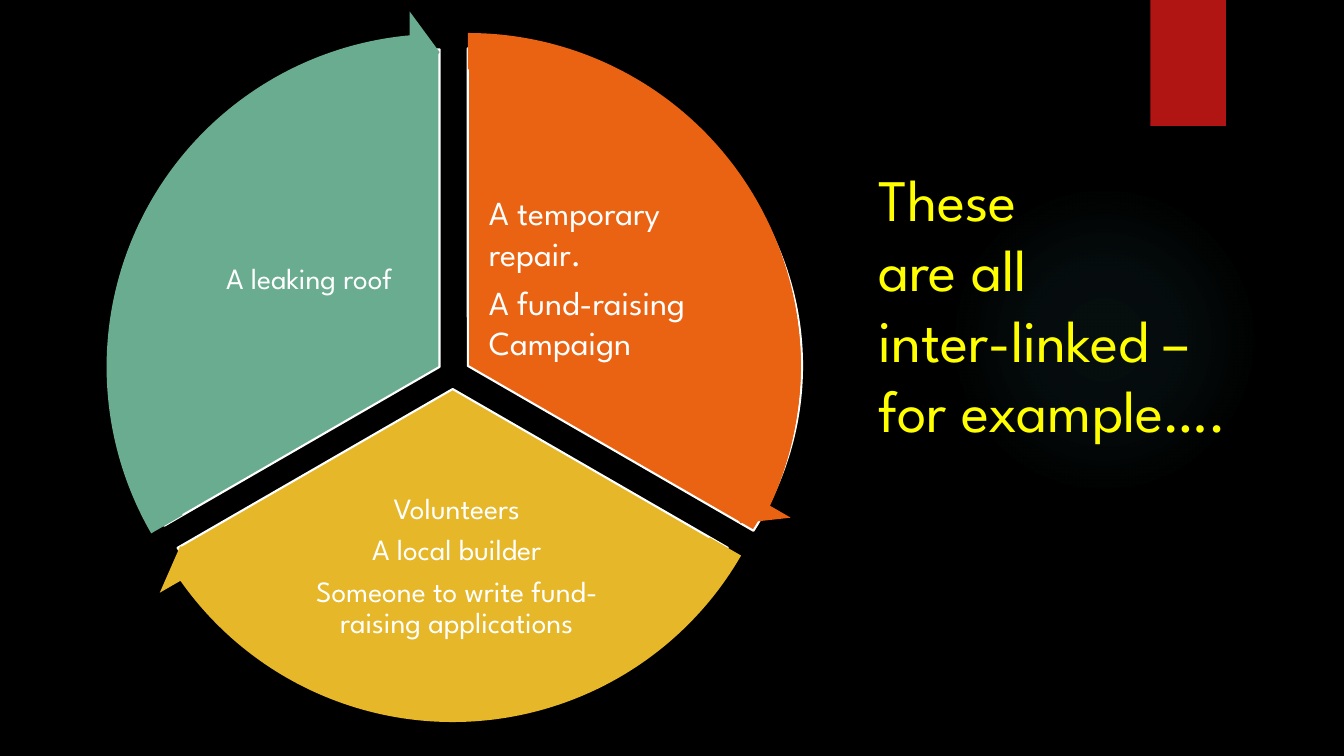
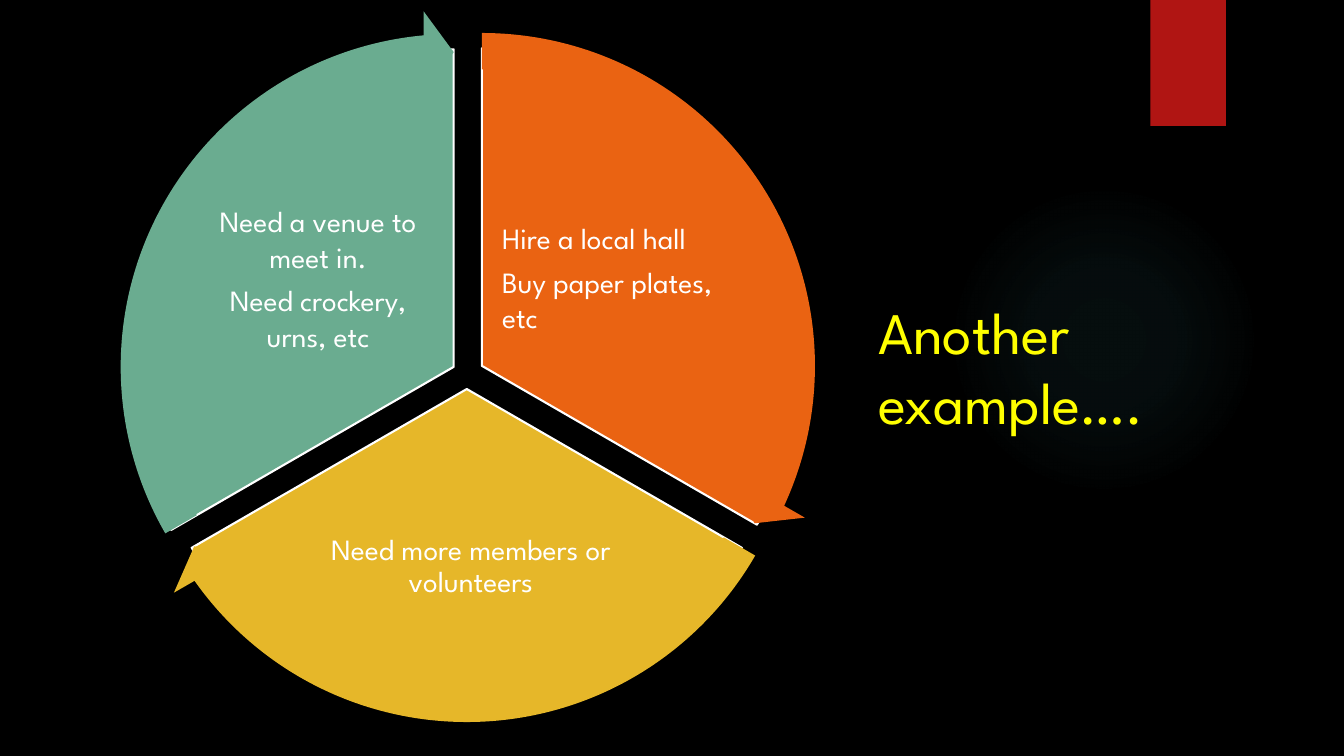
from pptx import Presentation
from pptx.dml.color import RGBColor
from pptx.enum.shapes import MSO_SHAPE
from pptx.enum.text import MSO_ANCHOR, MSO_AUTO_SIZE, PP_ALIGN
from pptx.oxml import parse_xml
from pptx.oxml.ns import nsdecls, qn
from pptx.util import Inches, Pt

BLACK = RGBColor(0x00, 0x00, 0x00)
WHITE = RGBColor(0xFF, 0xFF, 0xFF)
YELLOW = RGBColor(0xFF, 0xFF, 0x00)
RED = RGBColor(0xB0, 0x15, 0x13)
ORANGE = RGBColor(0xEA, 0x63, 0x12)
GOLD = RGBColor(0xE6, 0xB7, 0x29)
GREEN = RGBColor(0x6A, 0xAC, 0x90)
GLOW = "50B9C1"
FONT = "League Spartan"

PIE_SIZE = 6.3
ARROW_SIZE = 7.08
# Angles are in units of 100000/60000 degree, as the adjustments take them
ARROW_HEAD_ANGLE = 3.275
TEXT_INSET = Inches(0.03)

# colour, start angle, end angle, pie corner, arrow corner,
# text top, text height, alignment, line spacing, space after
SEGMENTS = [
    (ORANGE, 162, 18, (1.49, 0.48), (1.1, 0.09), 1.81, 1.88, PP_ALIGN.LEFT, 1.0, 6),
    (GOLD, 18, 90, (1.34, 0.71), (0.95, 0.32), 4.8, 1.65, PP_ALIGN.CENTER, 0.9, 7),
    (GREEN, 90, 162, (1.21, 0.49), (0.82, 0.1), 1.82, 1.88, PP_ALIGN.CENTER, 1.0, 6),
]

# title, title top, wheel shift, and for each segment:
# pie width, text left, text width, text size, paragraphs
EXAMPLES = [
    ("These\vare all\vinter-linked –\vfor example….", 1.56, 0, [
        (6.63, 4.82, 2.37, 24, ["A temporary repair.", "A fund-raising Campaign"]),
        (PIE_SIZE, 2.84, 3.38, 21, ["Volunteers", "A local builder",
                                    "Someone to write fund-raising applications"]),
        (PIE_SIZE, 1.94, 2.25, 21, ["A leaking roof"]),
    ]),
    ("Another\vexample….", 2.88, 0.14, [
        (PIE_SIZE, 4.81, 2.25, 21, ["Hire a local hall", "Buy paper plates, etc"]),
        (PIE_SIZE, 2.84, 3.38, 21, ["Need more members or volunteers"]),
        (6.53, 1.85, 2.33, 21, ["Need a venue to meet in.", "Need crockery, urns, etc"]),
    ]),
]


def add_filled(shapes, preset, left, top, width, height, colour, adjustments=()):
    """Add a preset shape with a plain fill, no outline and no shadow."""
    shape = shapes.add_shape(preset, Inches(left), Inches(top), Inches(width), Inches(height))
    for index, value in enumerate(adjustments):
        shape.adjustments[index] = value
    shape.shadow.inherit = False
    shape.fill.solid()
    shape.fill.fore_color.rgb = colour
    shape.line.fill.background()
    return shape


def style_runs(paragraph, size, colour):
    for run in paragraph.runs:
        run.font.name = FONT
        run.font.size = Pt(size)
        run.font.color.rgb = colour


prs = Presentation()
prs.slide_width = Inches(13.33)
prs.slide_height = Inches(7.5)
background = prs.slide_master.background.fill
background.solid()
background.fore_color.rgb = BLACK

title_only = prs.slide_layouts[5]
slides = [prs.slides.add_slide(title_only) for _ in EXAMPLES]

# The glow and the red tab belong to the layout, behind its placeholders
glow = add_filled(slides[0].shapes, MSO_SHAPE.OVAL, 9.41, 1.83, 3.08, 3.08, BLACK)
stops = "".join(
    f'<a:gs pos="{position}000"><a:srgbClr val="{GLOW}"><a:alpha val="{alpha}000"/></a:srgbClr></a:gs>'
    for position, alpha in [(0, 7), (36, 6), (69, 0)]
)
gradient = parse_xml(
    f'<a:gradFill {nsdecls("a")} rotWithShape="1"><a:gsLst>{stops}</a:gsLst><a:path path="circle">'
    '<a:fillToRect l="50000" t="50000" r="50000" b="50000"/></a:path></a:gradFill>'
)
glow_properties = glow.element.spPr
glow_properties.replace(glow_properties.find(qn("a:solidFill")), gradient)
red_tab = add_filled(slides[0].shapes, MSO_SHAPE.RECTANGLE, 11.41, 0, 0.75, 1.25, RED)
layout_title = title_only.placeholders[0].element
for decoration in (glow, red_tab):
    layout_title.addprevious(decoration.element)

for slide, (heading, heading_top, shift, contents) in zip(slides, EXAMPLES):
    title = slide.shapes.title
    title.left, title.top = Inches(8.61), Inches(heading_top)
    title.width, title.height = Inches(4.53), Inches(1.53)
    title_frame = title.text_frame
    title_frame.text = heading
    title_frame.word_wrap = True
    title_frame.auto_size = MSO_AUTO_SIZE.NONE
    title_frame.vertical_anchor = MSO_ANCHOR.TOP
    title_frame.paragraphs[0].alignment = PP_ALIGN.LEFT
    style_runs(title_frame.paragraphs[0], 42, YELLOW)

    wheel = slide.shapes.add_group_shape().shapes
    for segment, content in zip(SEGMENTS, contents):
        colour, start, end, (pie_left, pie_top), _, text_top, text_height, align, spacing, after = segment
        pie_width, text_left, text_width, size, lines = content
        # A wider pie keeps its centre
        centred_left = pie_left + shift - (pie_width - PIE_SIZE) / 2
        pie = add_filled(wheel, MSO_SHAPE.PIE, centred_left, pie_top, pie_width, PIE_SIZE,
                         colour, (start, end))
        pie.line.color.rgb = WHITE
        pie.line.width = Pt(1.5)

        label = wheel.add_textbox(Inches(text_left + shift), Inches(text_top),
                                  Inches(text_width), Inches(text_height)).text_frame
        label.word_wrap = True
        label.vertical_anchor = MSO_ANCHOR.MIDDLE
        label.margin_left = label.margin_right = TEXT_INSET
        label.margin_top = label.margin_bottom = TEXT_INSET
        label.text = "\n".join(lines)
        for paragraph in label.paragraphs:
            paragraph.alignment = align
            paragraph.line_spacing = spacing
            paragraph.space_after = Pt(after)
            style_runs(paragraph, size, WHITE)

    for colour, start, end, _, (arrow_left, arrow_top), *_ in SEGMENTS:
        add_filled(wheel, MSO_SHAPE.CIRCULAR_ARROW, arrow_left + shift, arrow_top,
                   ARROW_SIZE, ARROW_SIZE, colour,
                   (0.051, ARROW_HEAD_ANGLE, end - ARROW_HEAD_ANGLE, start, 0.059))

prs.save("out.pptx")
